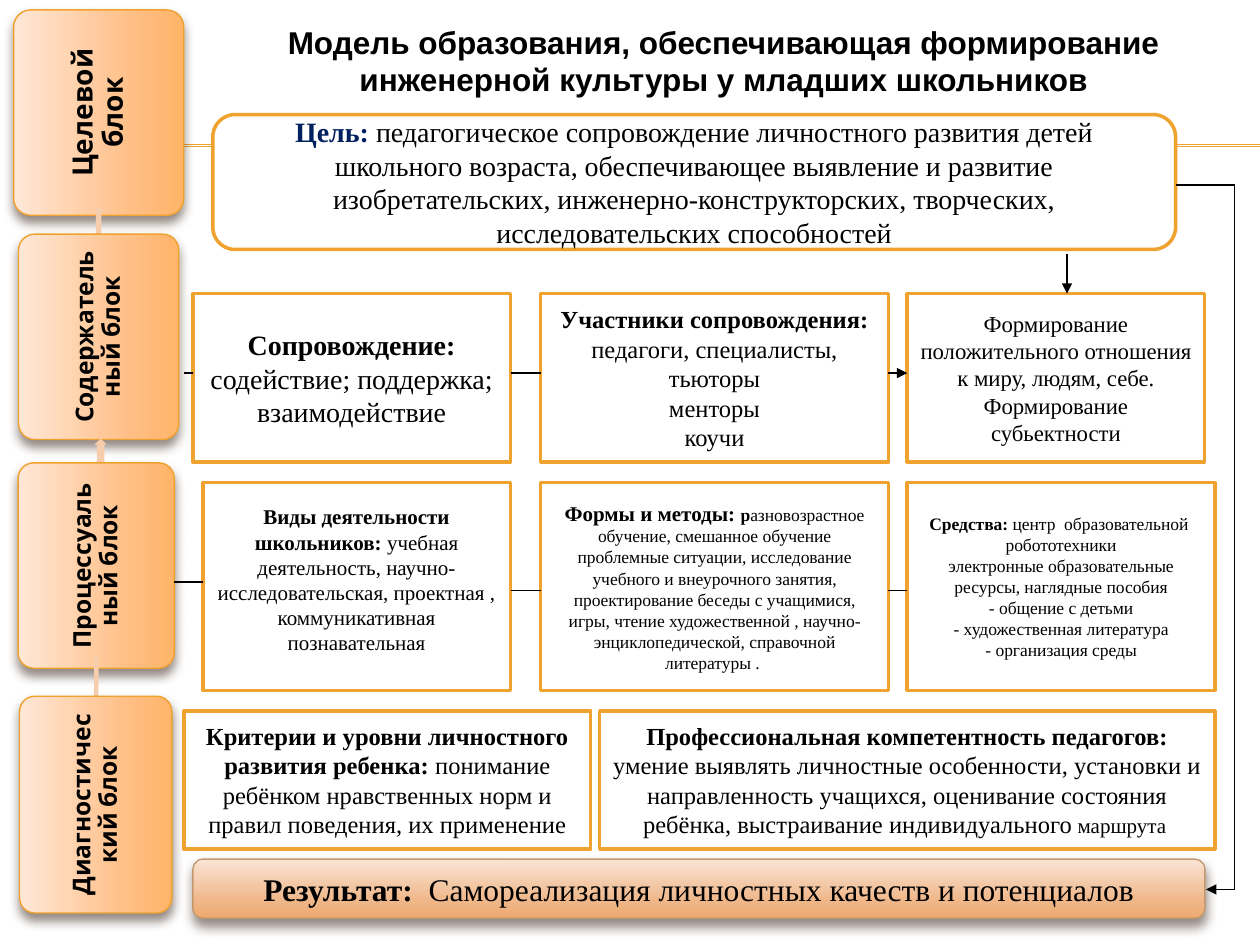
"""Builds the slide with the model of engineering culture education."""
from dataclasses import dataclass

from lxml.etree import SubElement
from pptx import Presentation
from pptx.dml.color import RGBColor
from pptx.enum.shapes import MSO_CONNECTOR, MSO_SHAPE
from pptx.enum.text import MSO_ANCHOR, MSO_AUTO_SIZE, PP_ALIGN
from pptx.oxml.ns import qn
from pptx.util import Cm, Pt

COLORS = {
    "white": "FFFFFF", "black": "000000", "navy": "002060", "orange": "F0A22E",
    "tan": "C3986D", "arrow": "F6CEAD", "shadow": "4E3B30",
}
STAGE_FILL = ((0, "FFE7D7"), (72, "FFBE84"), (100, "FFB468"))
RESULT_FILL = ((0, "FAE4D5"), (72, "EFB688"), (100, "EFAA6F"))
SERIF = "Times New Roman"


@dataclass
class Run:
    text: str
    size: float
    bold: bool = False
    color: str = "black"
    font: str = SERIF


@dataclass
class Box:
    x: float
    y: float
    w: float
    h: float
    paras: list[list[Run]]
    rounded: bool = False
    bottom: float = 0.13


@dataclass
class Stage:
    text: str
    size: float
    cx: float
    cy: float
    length: float
    depth: float


@dataclass
class Arrow:
    cx: float
    cy: float
    length: float
    depth: float
    rotation: float


@dataclass
class Line:
    x1: float
    y1: float
    x2: float
    y2: float
    head: bool = False
    color: str = "black"


ROW1, ROW2, ROW3 = (5.92, 3.4), (9.73, 4.19), (14.33, 2.79)
MID, MID_W, RIGHT, RIGHT_END = 10.9, 7.01, 18.29, 24.89
GAP1, GAP2 = 10.31, 17.91

BOXES = [
    Box(3.89, ROW1[0], 6.4, ROW1[1], [
        [Run("Сопровождение:", 16, True)],
        [Run("содействие; поддержка; взаимодействие", 16)]]),
    Box(MID, ROW1[0], MID_W, ROW1[1], [
        [Run("Участники сопровождения:", 14, True)],
        [Run("педагоги, специалисты, тьюторы", 14)],
        [Run("менторы", 14)],
        [Run("коучи", 14)]]),
    Box(RIGHT, ROW1[0], 5.99, ROW1[1], [
        [Run("Формирование положительного отношения к миру, людям, себе. "
             "Формирование субьектности", 13)]]),
    Box(4.29, 2.31, 19.41, 2.72, [
        [Run("Цель: ", 16, True, "navy"),
         Run("педагогическое сопровождение личностного развития детей школьного возраста, "
             "обеспечивающее выявление и развитие изобретательских, инженерно-конструкторских, "
             "творческих, исследовательских способностей", 16)]], rounded=True),
    Box(4.09, ROW2[0], 6.2, ROW2[1], [
        [Run("Виды деятельности школьников: ", 12, True),
         Run("учебная деятельность, научно-исследовательская, проектная , "
             "коммуникативная познавательная", 12)]], bottom=0.41),
    Box(MID, ROW2[0], MID_W, ROW2[1], [
        [Run("Формы и методы: ", 12, True), Run("р", 10, True),
         Run("азновозрастное обучение, смешанное обучение проблемные ситуации, исследование "
             "учебного и внеурочного занятия, проектирование беседы с учащимися, игры, чтение "
             "художественной , научно-энциклопедической, справочной литературы . ", 10)]]),
    Box(RIGHT, ROW2[0], 6.2, ROW2[1], [
        [Run("Средства:", 10, True), Run(" центр  образовательной  робототехники", 10)],
        [Run("электронные образовательные ресурсы, наглядные пособия", 10)],
        [Run("- общение с детьми", 10)],
        [Run("- художественная литература", 10)],
        [Run("- организация среды", 10)]]),
    Box(3.71, ROW3[0], 8.2, ROW3[1], [
        [Run("Критерии и уровни личностного развития ребенка:", 14, True),
         Run(" понимание ребёнком нравственных норм и правил поведения, их применение", 14)]]),
    Box(12.09, ROW3[0], 12.4, ROW3[1], [
        [Run("Профессиональная компетентность педагогов:", 14, True),
         Run(" умение выявлять личностные особенности, установки и направленность учащихся, "
             "оценивание состояния ребёнка, выстраивание индивидуального", 14),
         Run(" маршрута ", 12)]]),
]
RESULT = Box(3.89, 17.32, 20.4, 1.19, [
    [Run("Результат:  ", 18, True),
     Run("Самореализация личностных качеств и потенциалов", 18)]], rounded=True)
CHAIN = [
    Stage("Целевой блок", 16, 1.99, 2.27, 4.14, 3.43),
    Arrow(1.99, 4.58, 0.84, 0.18, 270),
    Stage("Содержательный блок", 14, 1.99, 6.79, 4.14, 3.23),
    Arrow(2.03, 9.22, 0.76, 0.25, 269.5),
    Stage("Процессуальный блок", 14, 1.94, 11.4, 4.14, 3.15),
    Arrow(1.94, 13.82, 1.14, 0.15, 90.4),
    Stage("Диагностический блок", 14, 1.93, 16.22, 4.37, 3.07),
]
RULES = [Line(1.42, y, 25.4, y, color="orange") for y in (2.92, 2.95)]
LINES = [
    Line(3.71, 7.52, 3.89, 7.52), Line(GAP1, 7.52, MID, 7.52),
    Line(GAP2, 7.52, RIGHT, 7.52, True), Line(21.51, 5.13, 21.51, 5.92, True),
    Line(3.51, 11.73, 4.09, 11.73), Line(GAP1, 11.91, MID, 11.91),
    Line(GAP2, 11.91, RIGHT, 11.91), Line(RIGHT_END, 3.73, RIGHT_END, 17.93),
    Line(RIGHT_END, 17.93, 24.31, 17.93, True), Line(23.7, 3.73, RIGHT_END, 3.73),
]


def rgb(name: str) -> RGBColor:
    return RGBColor.from_string(COLORS[name])


def write(tf, paras: list[list[Run]], spacing: float = 1.0) -> None:
    tf.word_wrap = True
    for i, runs in enumerate(paras):
        p = tf.add_paragraph() if i else tf.paragraphs[0]
        p.alignment = PP_ALIGN.CENTER
        p.line_spacing = spacing
        for run in runs:
            r = p.add_run()
            r.text = run.text
            r.font.name, r.font.size, r.font.bold = run.font, Pt(run.size), run.bold
            r.font.color.rgb = rgb(run.color)


def add_shape(slide, kind, x, y, w, h, fill="white", line="orange", width=2.0):
    sp = slide.shapes.add_shape(kind, Cm(x), Cm(y), Cm(w), Cm(h))
    sp.shadow.inherit = False
    sp.fill.solid()
    sp.fill.fore_color.rgb = rgb(fill)
    if line:
        sp.line.color.rgb = rgb(line)
        sp.line.width = Pt(width)
    else:
        sp.line.fill.background()
    sp.text_frame.vertical_anchor = MSO_ANCHOR.MIDDLE
    return sp


def add_glow(sp, stops) -> None:
    sp.fill.gradient()
    sp.fill.gradient_angle = 270
    pr = sp._element.spPr
    gs_list = pr.find(qn("a:gradFill")).find(qn("a:gsLst"))
    for gs in list(gs_list):
        gs_list.remove(gs)
    for pos, color in stops:
        gs = SubElement(gs_list, qn("a:gs"), pos=str(pos * 1000))
        SubElement(gs, qn("a:srgbClr"), val=color)
    shadow = SubElement(pr.find(qn("a:effectLst")), qn("a:outerShdw"), blurRad=str(Pt(6)),
                        dist=str(Pt(4)), dir="5400000", rotWithShape="0")
    color = SubElement(shadow, qn("a:srgbClr"), val=COLORS["shadow"])
    SubElement(color, qn("a:alpha"), val="60000")


def add_box(slide, box: Box, line: str = "orange", width: float = 2.0):
    kind = MSO_SHAPE.ROUNDED_RECTANGLE if box.rounded else MSO_SHAPE.RECTANGLE
    sp = add_shape(slide, kind, box.x, box.y, box.w, box.h, line=line, width=width)
    sp.text_frame.margin_bottom = Cm(box.bottom)
    write(sp.text_frame, box.paras)
    return sp


def add_link(slide, item: Stage | Arrow) -> None:
    is_stage = isinstance(item, Stage)
    kind = MSO_SHAPE.ROUNDED_RECTANGLE if is_stage else MSO_SHAPE.RIGHT_ARROW
    sp = add_shape(slide, kind, item.cx - item.length / 2, item.cy - item.depth / 2,
                   item.length, item.depth, "arrow", "orange" if is_stage else None, 0.79)
    sp.adjustments[0] = 0.1 if is_stage else 0.6
    sp.rotation = 270 if is_stage else item.rotation
    if is_stage:
        add_glow(sp, STAGE_FILL)
        tf = sp.text_frame
        tf.margin_left = tf.margin_right = tf.margin_top = tf.margin_bottom = Cm(0.16)
        write(tf, [[Run(item.text, item.size, True, font="Cabin")]], 0.9)


def add_line(slide, line: Line) -> None:
    cn = slide.shapes.add_connector(MSO_CONNECTOR.STRAIGHT, Cm(line.x1), Cm(line.y1),
                                    Cm(line.x2), Cm(line.y2))
    cn.line.color.rgb = rgb(line.color)
    cn.line.width = Pt(0.75)
    if line.head:
        SubElement(cn.line._get_or_add_ln(), qn("a:tailEnd"), type="triangle")
    SubElement(cn._element.spPr, qn("a:effectLst"))


def main() -> None:
    prs = Presentation()
    prs.slide_width, prs.slide_height = Cm(25.4), Cm(19.05)
    slide = prs.slides.add_slide(prs.slide_layouts[5])
    title = slide.shapes.title
    title.left, title.top, title.width, title.height = Cm(4.29), Cm(0.33), Cm(20.6), Cm(1.78)
    title.text_frame.vertical_anchor = MSO_ANCHOR.TOP
    title.text_frame.auto_size = MSO_AUTO_SIZE.NONE
    write(title.text_frame, [[Run("Модель образования, обеспечивающая формирование инженерной "
                                  "культуры у младших школьников", 18, True, font="Arial")]])
    for rule in RULES:
        add_line(slide, rule)
    for item in CHAIN:
        add_link(slide, item)
    for box in BOXES:
        add_box(slide, box)
    add_glow(add_box(slide, RESULT, "tan", 0.79), RESULT_FILL)
    for line in LINES:
        add_line(slide, line)
    prs.save("out.pptx")


if __name__ == "__main__":
    main()
